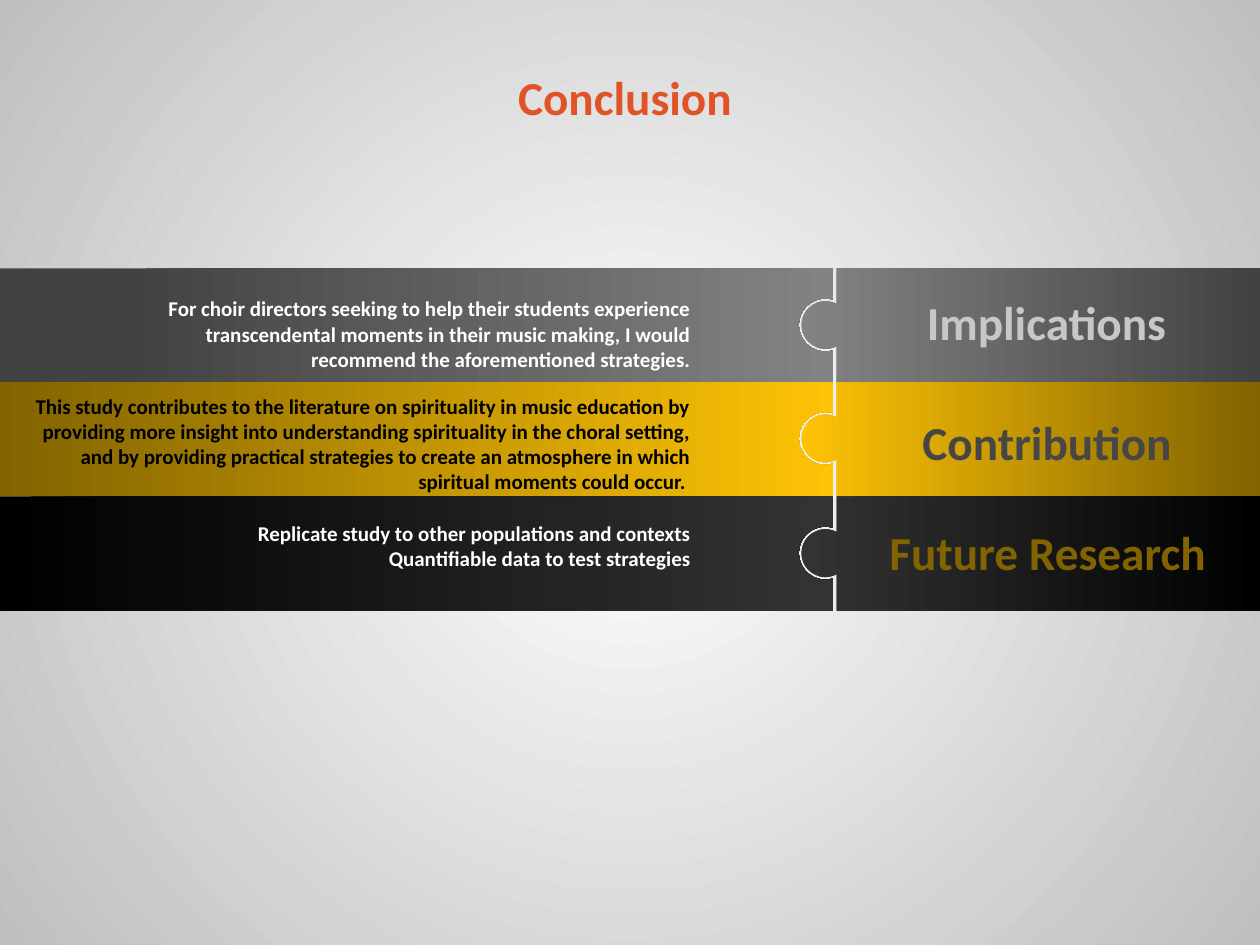
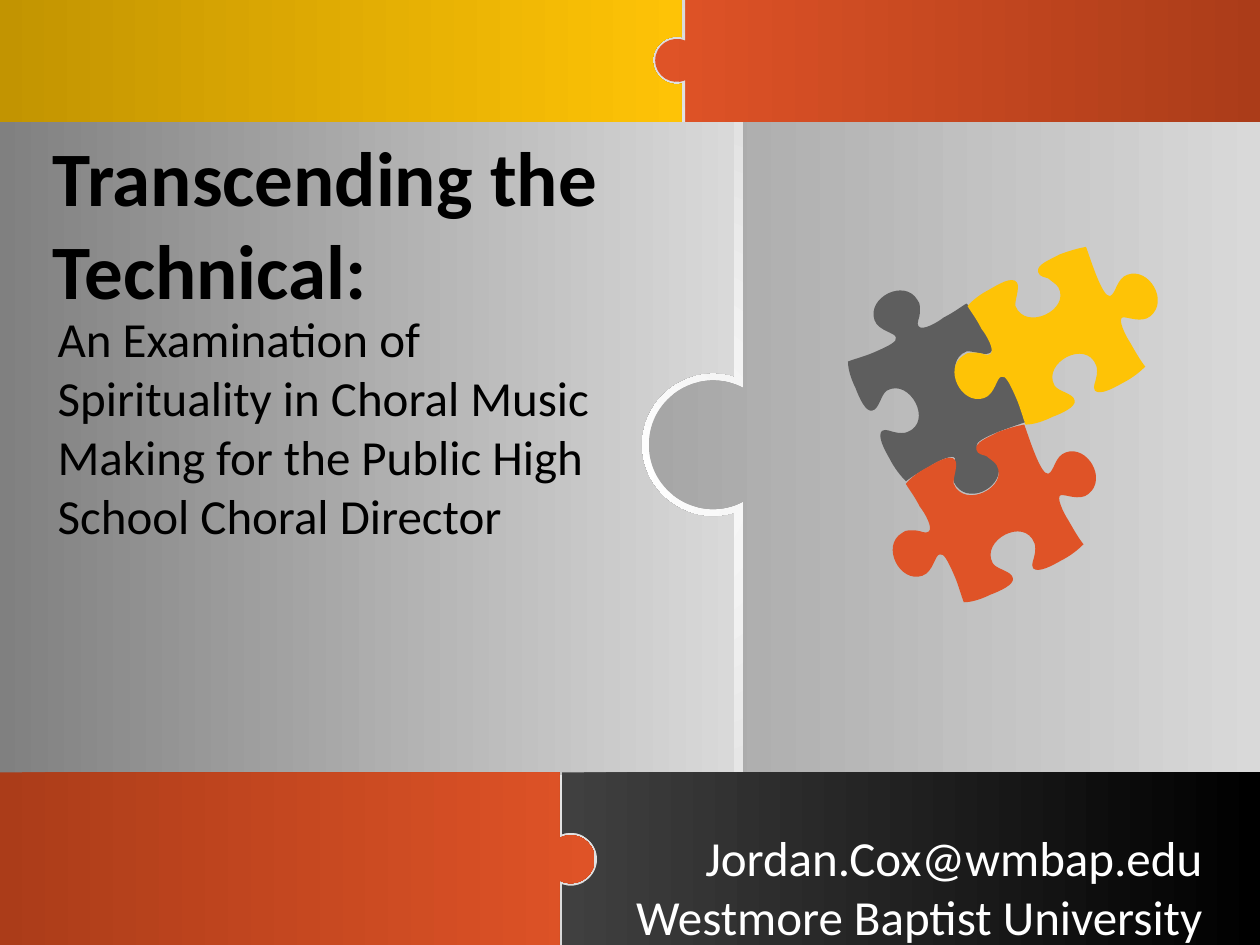
"""Builds two puzzle-themed slides: a conclusion and a closing cover."""
import math

import lxml.etree
import pptx
import pptx.dml.color
import pptx.enum.text
import pptx.oxml.ns
import pptx.util

PX = 9144
FONT = "Calibri"
LEFT, RIGHT = -1, 1001
WHITE, BLACK, ORANGE, YELLOW, GREY = "FFFFFF", "000000", "DF5327", "FEC306", "5E5E5E"
RUST, BRONZE, CHARCOAL = "AB3C19", "816301", "424242"
ALIGN = {
    "l": pptx.enum.text.PP_ALIGN.LEFT,
    "c": pptx.enum.text.PP_ALIGN.CENTER,
    "r": pptx.enum.text.PP_ALIGN.RIGHT,
}

CONCLUSION = {"text": "Conclusion", "box": (81, 49, 830, 56),
              "size": 27, "color": ORANGE, "bold": True, "align": "c"}
ROW_TOP, ROW_PITCH, ROW_HEIGHT = 213, 90.5, 91
ROWS = [
    {"label": "Implications", "label_box": (661, 228, 339, 56), "label_color": "C7C7C7",
     "body": "For choir directors seeking to help their students experience transcendental "
             "moments in their music making, I would recommend the aforementioned strategies.",
     "body_box": (81, 230, 477, 88), "body_color": WHITE,
     "outer": CHARCOAL, "inner": "838383", "outer_stop": 0.15},
    {"label": "Contribution", "label_box": (662, 323, 338, 56), "label_color": "464646",
     "body": "This study contributes to the literature on spirituality in music education by "
             "providing more insight into understanding spirituality in the choral setting, "
             "and by providing practical strategies to create an atmosphere in which "
             "spiritual moments could occur. ",
     "body_box": (0, 307, 558, 109), "body_color": BLACK,
     "outer": BRONZE, "inner": YELLOW, "outer_stop": 0},
    {"label": "Future Research", "label_box": (662, 410, 339, 56), "label_color": BRONZE,
     "body": "Replicate study to other populations and contexts\n"
             "Quantifiable data to test strategies",
     "body_box": (163, 408, 395, 68), "body_color": WHITE,
     "outer": BLACK, "inner": "333333", "outer_stop": 0},
]

COVER_TITLE = {"text": "Transcending the Technical:", "box": (32, 98, 674, 158),
               "size": 44, "color": BLACK, "bold": True}
COVER_TEXTS = [
    {"text": "An Examination of Spirituality in Choral Music Making for the Public High "
             "School Choral Director",
     "box": (36, 240, 473, 199), "size": 28, "color": BLACK},
    {"text": "Jordan.Cox@wmbap.edu\nWestmore Baptist University",
     "box": (472, 652, 492, 104), "size": 28, "color": WHITE, "align": "r"},
]
COVER_BANDS = [
    {"top": 97, "bottom": 615, "seams": (583, 590), "knob": (566, 353), "radii": (57, 51),
     "bulge": -1, "colors": (("808080", "D9D9D9"), ("A6A6A6", "D9D9D9"))},
    {"top": 0, "bottom": 97, "seams": (541, 544), "knob": (537, 48), "radii": (19, 17),
     "bulge": -1, "colors": (("C29401", YELLOW), (ORANGE, RUST))},
    {"top": 613, "bottom": 750, "seams": (444, 446), "knob": (453, 682), "radii": (19, 21),
     "bulge": 1, "colors": ((RUST, ORANGE), ("404040", BLACK))},
]

PIECE_TILT = 333.9
PIECE_CENTRE = (790, 408)
PIECE_START = (813, 337)
PIECE_CURVES = [
    (817, 348, 826, 377, 832, 376), (837, 374, 837, 362, 846, 359),
    (863, 353, 879, 380, 864, 392), (857, 398, 845, 392, 842, 393),
    (838, 394, 844, 407, 848, 413), (852, 420, 856, 427, 860, 432),
    (856, 436, 850, 441, 842, 445), (835, 449, 824, 455, 820, 451),
    (818, 448, 821, 443, 821, 441), (822, 438, 822, 433, 821, 431),
    (813, 410, 778, 429, 788, 447), (791, 452, 803, 453, 804, 459),
    (805, 464, 794, 469, 786, 472), (780, 475, 772, 478, 765, 478),
    (763, 473, 761, 465, 758, 458), (752, 444, 749, 439, 746, 440),
    (742, 440, 741, 454, 732, 457), (714, 463, 699, 433, 716, 423),
    (719, 420, 724, 421, 727, 421), (730, 421, 735, 424, 737, 422),
    (741, 419, 734, 407, 730, 402), (726, 394, 722, 389, 719, 384),
    (723, 379, 730, 374, 736, 371), (743, 367, 754, 360, 758, 365),
    (761, 369, 756, 380, 757, 384), (765, 404, 801, 387, 791, 369),
    (789, 366, 785, 364, 783, 362), (781, 361, 776, 361, 775, 357),
    (773, 351, 785, 347, 792, 343), (800, 340, 807, 338, 813, 337),
]
PIECES = [((743, 312), 63.9, GREY), (PIECE_CENTRE, PIECE_TILT, ORANGE),
          ((839, 267), PIECE_TILT, YELLOW)]


def rgb(color):
    return pptx.dml.color.RGBColor.from_string(color)


def px(length):
    return pptx.util.Emu(round(length * PX))


def set_gradient(fill, start, end, start_stop=0):
    fill.gradient()
    first, last = fill.gradient_stops
    first.color.rgb, first.position = rgb(start), start_stop
    last.color.rgb, last.position = rgb(end), 1
    fill.gradient_angle = 0


def set_background(master):
    set_gradient(master.background.fill, WHITE, "BFBFBF")
    qn = pptx.oxml.ns.qn
    linear = next(master.element.iter(qn("a:lin")))
    gradient = linear.getparent()
    gradient.remove(linear)
    radial = lxml.etree.SubElement(gradient, qn("a:path"), {"path": "circle"})
    lxml.etree.SubElement(radial, qn("a:fillToRect"), dict.fromkeys("ltrb", "50000"))


def write(shape, text, box, size, color, bold=False, align="l"):
    shape.left, shape.top, shape.width, shape.height = map(px, box)
    frame = shape.text_frame
    frame.text = text
    frame.word_wrap = True
    frame.auto_size = pptx.enum.text.MSO_AUTO_SIZE.NONE
    frame.vertical_anchor = pptx.enum.text.MSO_ANCHOR.TOP
    for paragraph in frame.paragraphs:
        paragraph.alignment = ALIGN[align]
        for run in paragraph.runs:
            run.font.name, run.font.size, run.font.bold = FONT, pptx.util.Pt(size), bold
            run.font.color.rgb = rgb(color)


def add_text(slide, **content):
    write(slide.shapes.add_textbox(*map(px, content["box"])), **content)


def add_title(slide, content):
    title = slide.shapes.title
    write(title, **content)
    title.element.getparent().append(title.element)


def add_outline(slide, start, segments):
    """Adds a closed outline whose segments hold one point (line) or three (curve)."""
    builder = slide.shapes.build_freeform(*map(px, start))
    builder.add_line_segments([tuple(map(px, point)) for segment in segments
                               for point in segment], close=True)
    outline = builder.convert_to_shape()
    qn = pptx.oxml.ns.qn
    lines = iter(list(outline.element.iter(qn("a:lnTo"))))
    for segment in segments:
        first, *others = [next(lines) for _ in segment]
        if others:
            first.tag = qn("a:cubicBezTo")
        for line in others:
            first.append(line[0])
            line.getparent().remove(line)
    outline.shadow.inherit = False
    outline.line.fill.background()
    return outline


def knob_curves(seam, knob, radius, bulge):
    """Two curves down the seam around a round knob that bulges left (-1) or right (1)."""
    half = math.acos((seam - knob[0]) * bulge / radius)
    handle = 4 / 3 * math.tan(half / 4)

    def spot(angle, reach=0):
        return (knob[0] + bulge * radius * (math.cos(angle) - reach * math.sin(angle)),
                knob[1] + radius * (math.sin(angle) + reach * math.cos(angle)))

    return [(spot(begin, handle), spot(end, -handle), spot(end))
            for begin, end in ((-half, 0), (0, half))], spot(-half)


def add_band(slide, top, bottom, seams, knob, radii, bulge, colors, first_stop=0):
    stops = (first_stop, 0)
    for edge, seam, radius, ends, stop in zip((LEFT, RIGHT), seams, radii, colors, stops):
        curves, neck = knob_curves(seam, knob, radius, bulge)
        tile = add_outline(slide, (edge, top), [((seam, top),), (neck,), *curves,
                                                ((seam, bottom),), ((edge, bottom),)])
        set_gradient(tile.fill, *ends, stop)


def turned(point, degrees):
    x, y = point
    cos, sin = math.cos(math.radians(degrees)), math.sin(math.radians(degrees))
    return x * cos - y * sin, x * sin + y * cos


def add_piece(slide, centre, rotation, color):
    """Adds the upright piece, then rotates it so that its origin lands on the centre."""
    flat = [PIECE_START] + [curve[i:i + 2] for curve in PIECE_CURVES for i in (0, 2, 4)]
    upright = [turned((x - PIECE_CENTRE[0], y - PIECE_CENTRE[1]), -PIECE_TILT)
               for x, y in flat]
    middle = [(min(axis) + max(axis)) / 2 for axis in zip(*upright)]
    shift = [c + t - m for c, t, m in zip(centre, turned(middle, rotation), middle)]
    start, *points = [(x + shift[0], y + shift[1]) for x, y in upright]
    piece = add_outline(slide, start, [points[i:i + 3] for i in range(0, len(points), 3)])
    piece.rotation = rotation
    piece.fill.solid()
    piece.fill.fore_color.rgb = rgb(color)


def build_conclusion(slide):
    for index, row in enumerate(ROWS):
        top = int(ROW_TOP + index * ROW_PITCH)
        outer, inner = row["outer"], row["inner"]
        add_band(slide, top, top + ROW_HEIGHT, (661, 664), (655, top + 45), (21, 19), -1,
                 ((outer, inner), (inner, outer)), row["outer_stop"])
    for row in ROWS:
        add_text(slide, text=row["label"], box=row["label_box"], size=27,
                 color=row["label_color"], bold=True, align="c")
    for row in ROWS:
        add_text(slide, text=row["body"], box=row["body_box"], size=12,
                 color=row["body_color"], bold=True, align="r")
    add_title(slide, CONCLUSION)


def build_cover(slide):
    for band in COVER_BANDS:
        add_band(slide, **band)
    for piece in PIECES:
        add_piece(slide, *piece)
    for content in COVER_TEXTS:
        add_text(slide, **content)
    add_title(slide, COVER_TITLE)


def main():
    deck = pptx.Presentation()
    deck.slide_width, deck.slide_height = px(1000), px(750)
    set_background(deck.slide_master)
    title_only = deck.slide_layouts[5]
    for build in (build_conclusion, build_cover):
        build(deck.slides.add_slide(title_only))
    deck.save("out.pptx")


if __name__ == "__main__":
    main()
